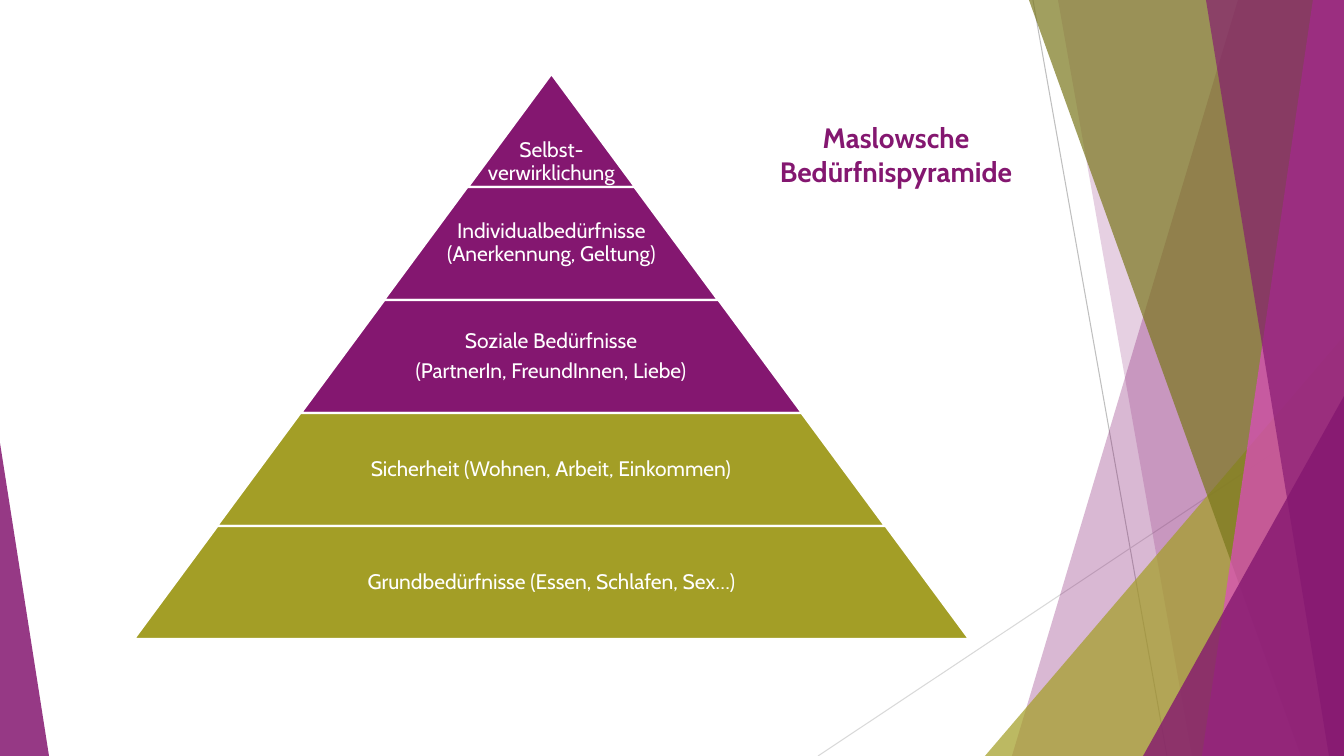
"""Build a slide with Maslow's pyramid of needs beside a faceted border."""
from dataclasses import dataclass

from lxml.etree import SubElement
from pptx import Presentation
from pptx.dml.color import RGBColor
from pptx.enum.shapes import MSO_CONNECTOR as Connector
from pptx.enum.shapes import MSO_SHAPE as Preset
from pptx.enum.text import MSO_ANCHOR as Anchor
from pptx.enum.text import MSO_AUTO_SIZE as AutoSize
from pptx.enum.text import PP_ALIGN as Align
from pptx.oxml.ns import qn
from pptx.shapes.autoshape import Shape
from pptx.slide import Slide
from pptx.util import Emu, Pt

WIDTH, HEIGHT = 1344, 756
SCALE = 12192000 / WIDTH
FONT = "Cabin"
COLORS = {
    "purple": "841770",
    "olive": "A39E26",
    "dark_olive": "7A771C",
    "pink": "DF4AC4",
    "white": "FFFFFF",
    "grey": "BFBFBF",
    "light_grey": "D9D9D9",
}
APEX_X, APEX_Y = 551, 74
TIER_HEIGHT, TIER_STEP = 113, 167
LABEL_SHARE = 0.65


@dataclass(frozen=True)
class Ray:
    start: tuple[int, int]
    end: tuple[int, int]
    color: str


@dataclass(frozen=True)
class Ribbon:
    top_x: int
    bottom_x: int
    color: str
    opacity: int


@dataclass(frozen=True)
class Wedge:
    left: int
    top: int
    width: int
    peak: int
    color: str
    opacity: int


@dataclass(frozen=True)
class Tier:
    lines: tuple[str, ...]
    color: str


RAYS = [
    Ray((1033, 0), (1167, HEIGHT), "grey"),
    Ray((WIDTH, 406), (818, HEIGHT), "light_grey"),
]
FACETS = [
    Ribbon(1238, 1012, "purple", 30),
    Ribbon(1058, 1192, "purple", 20),
    Wedge(985, 336, 359, 1, "olive", 72),
    Ribbon(1029, 1301, "dark_olive", 70),
    Ribbon(1313, 1202, "pink", 70),
    Ribbon(1206, 1329, "purple", 65),
    Wedge(1143, 396, 201, 1, "purple", 80),
    Wedge(0, 443, 49, 0, "purple", 85),
]
TIERS = [
    Tier(("Selbst-verwirklichung",), "purple"),
    Tier(("Individualbedürfnisse (Anerkennung, Geltung)",), "purple"),
    Tier(("Soziale Bedürfnisse", "(PartnerIn, FreundInnen, Liebe)"), "purple"),
    Tier(("Sicherheit (Wohnen, Arbeit, Einkommen)",), "olive"),
    Tier(("Grundbedürfnisse (Essen, Schlafen, Sex…)",), "olive"),
]


def px(length: int) -> Emu:
    """Turn a px length into EMU."""
    return Emu(round(length * SCALE))


def rgb(name: str) -> RGBColor:
    """Look up a named colour."""
    return RGBColor.from_string(COLORS[name])


def paint(shape: Shape, color: str) -> None:
    """Fill a shape with a solid colour and drop its shadow."""
    shape.shadow.inherit = False
    shape.fill.solid()
    shape.fill.fore_color.rgb = rgb(color)


def draw_ray(page: Slide, ray: Ray) -> None:
    """Draw a thin background line."""
    line = page.shapes.add_connector(
        Connector.STRAIGHT, *map(px, ray.start + ray.end))
    line.line.color.rgb = rgb(ray.color)
    line.line.width = Pt(0.75)
    SubElement(line._element.spPr, qn("a:effectLst"))


def draw_facet(page: Slide, facet: Ribbon | Wedge) -> None:
    """Draw a translucent facet of the border."""
    if isinstance(facet, Ribbon):
        outline = page.shapes.build_freeform(facet.top_x, 0, scale=SCALE)
        outline.add_line_segments(
            [(WIDTH, 0), (WIDTH, HEIGHT), (facet.bottom_x, HEIGHT)])
        shape = outline.convert_to_shape()
    else:
        shape = page.shapes.add_shape(
            Preset.ISOSCELES_TRIANGLE, px(facet.left), px(facet.top),
            px(facet.width), px(HEIGHT - facet.top))
        shape.adjustments[0] = facet.peak
    paint(shape, facet.color)
    shape.line.fill.background()
    solid = shape._element.spPr.find(f"{qn('a:solidFill')}/{qn('a:srgbClr')}")
    SubElement(solid, qn("a:alpha"), val=str(facet.opacity * 1000))


def add_text(page: Slide, left: int, top: int, width: int, height: int,
             lines: tuple[str, ...], size: int, color: str,
             bold: bool = False) -> Shape:
    """Add a wrapped, centred text box."""
    box = page.shapes.add_textbox(px(left), px(top), px(width), px(height))
    frame = box.text_frame
    frame.word_wrap = True
    frame.text = "\n".join(lines)
    for para in frame.paragraphs:
        para.alignment = Align.CENTER
        for span in para.runs:
            span.font.name = FONT
            span.font.size = Pt(size)
            span.font.bold = bold
            span.font.color.rgb = rgb(color)
    return box


def draw_tier(page: Slide, index: int, tier: Tier) -> None:
    """Draw one level of the pyramid and its label."""
    width = TIER_STEP * (index + 1)
    top = APEX_Y + TIER_HEIGHT * index
    shape = page.shapes.add_shape(
        Preset.TRAPEZOID, px(APEX_X - width // 2), px(top),
        px(width), px(TIER_HEIGHT))
    shape.adjustments[0] = TIER_STEP / 2 / TIER_HEIGHT
    paint(shape, tier.color)
    shape.line.color.rgb = rgb("white")
    shape.line.width = Pt(1.5)

    is_peak = index == 0
    label_width = width if is_peak else round(width * LABEL_SHARE)
    box = add_text(page, APEX_X - label_width // 2, top, label_width,
                   TIER_HEIGHT, tier.lines, 15, "white")
    frame = box.text_frame
    frame.vertical_anchor = Anchor.BOTTOM if is_peak else Anchor.MIDDLE
    frame.margin_left = frame.margin_right = px(2)
    frame.margin_top = frame.margin_bottom = px(2)
    for para in frame.paragraphs:
        para.line_spacing = 0.9
    for para in frame.paragraphs[:-1]:
        para.space_after = Pt(5.5)


def main() -> None:
    """Create and save the deck."""
    deck = Presentation()
    deck.slide_width, deck.slide_height = px(WIDTH), px(HEIGHT)
    page = deck.slides.add_slide(deck.slide_layouts[6])
    for ray in RAYS:
        draw_ray(page, ray)
    for facet in FACETS:
        draw_facet(page, facet)
    for index, tier in enumerate(TIERS):
        draw_tier(page, index, tier)
    title = add_text(page, 726, 116, 340, 78, ("Maslowsche Bedürfnispyramide",),
                     20, "purple", bold=True)
    title.text_frame.auto_size = AutoSize.SHAPE_TO_FIT_TEXT
    deck.save("out.pptx")


if __name__ == "__main__":
    main()
